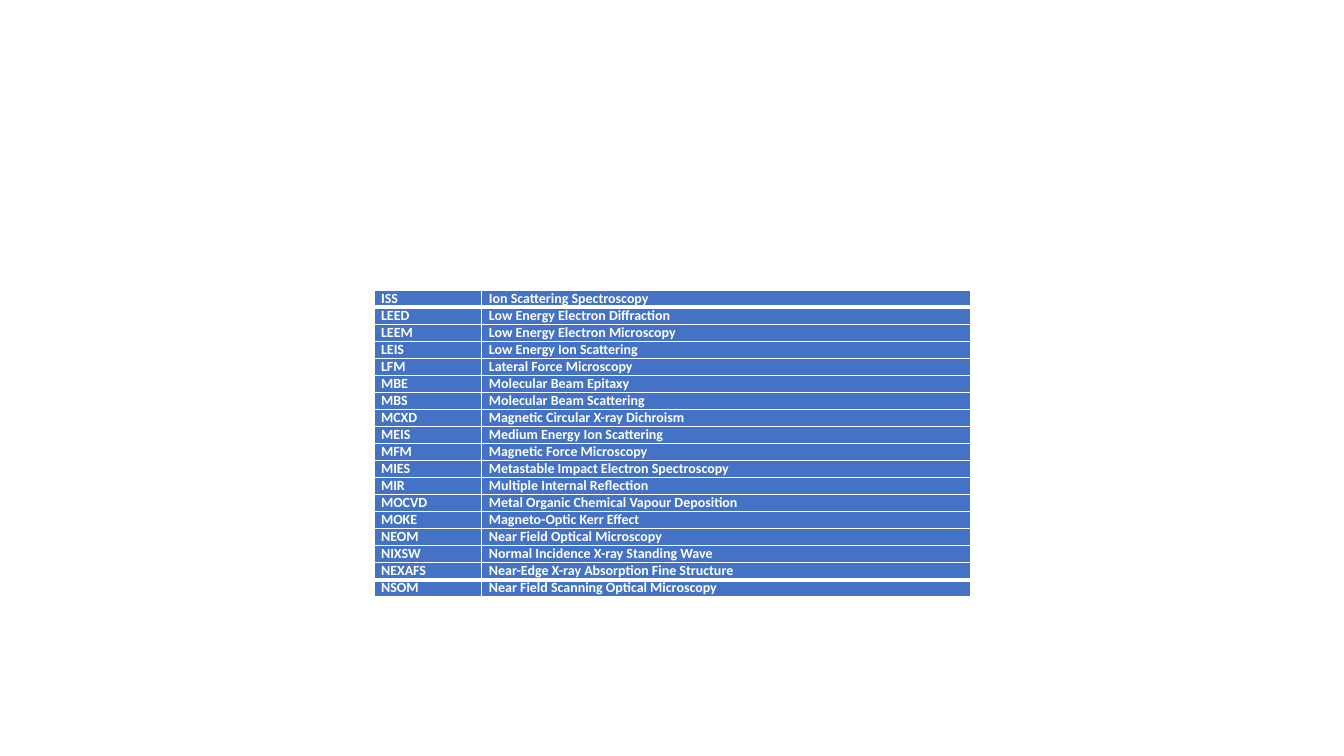
"""Build a slide with a table of surface science abbreviations."""
from lxml.etree import SubElement
from pptx import Presentation
from pptx.dml.color import RGBColor
from pptx.enum.text import PP_ALIGN
from pptx.oxml.ns import qn
from pptx.util import Inches, Pt

TECHNIQUES = [
    ("ISS", "Ion Scattering Spectroscopy"),
    ("LEED", "Low Energy Electron Diffraction"),
    ("LEEM", "Low Energy Electron Microscopy"),
    ("LEIS", "Low Energy Ion Scattering"),
    ("LFM", "Lateral Force Microscopy"),
    ("MBE", "Molecular Beam Epitaxy"),
    ("MBS", "Molecular Beam Scattering"),
    ("MCXD", "Magnetic Circular X-ray Dichroism"),
    ("MEIS", "Medium Energy Ion Scattering"),
    ("MFM", "Magnetic Force Microscopy"),
    ("MIES", "Metastable Impact Electron Spectroscopy"),
    ("MIR", "Multiple Internal Reflection"),
    ("MOCVD", "Metal Organic Chemical Vapour Deposition"),
    ("MOKE", "Magneto-Optic Kerr Effect"),
    ("NEOM", "Near Field Optical Microscopy"),
    ("NIXSW", "Normal Incidence X-ray Standing Wave"),
    ("NEXAFS", "Near-Edge X-ray Absorption Fine Structure"),
    ("NSOM", "Near Field Scanning Optical Microscopy"),
]
COLUMN_WIDTHS = (1.07, 4.85)
LEFT, TOP, HEIGHT = 3.71, 2.88, 3
BLUE, WHITE = "4472C4", "FFFFFF"
THIN, THICK = 1, 3


def rgb(code):
    return RGBColor.from_string(code)


def add_borders(cell, top, bottom):
    properties = cell._tc.get_or_add_tcPr()
    sides = (("a:lnL", THIN), ("a:lnR", THIN), ("a:lnT", top), ("a:lnB", bottom))
    for position, (side, weight) in enumerate(sides):
        border = SubElement(properties, qn(side), w=str(Pt(weight)))
        fill = SubElement(border, qn("a:solidFill"))
        SubElement(fill, qn("a:srgbClr"), val=WHITE)
        properties.insert(position, border)


def fill_cell(cell, wording):
    cell.fill.solid()
    cell.fill.fore_color.rgb = rgb(BLUE)
    cell.margin_left = cell.margin_right = Inches(0.07)
    cell.margin_top = cell.margin_bottom = 0
    cell.text_frame.text = wording
    paragraph = cell.text_frame.paragraphs[0]
    paragraph.alignment = PP_ALIGN.JUSTIFY
    font = paragraph.runs[0].font
    font.name, font.size, font.bold = "Calibri", Pt(10), True
    font.color.rgb = rgb(WHITE)


def main():
    presentation = Presentation()
    presentation.slide_width, presentation.slide_height = Inches(13.33), Inches(7.5)
    slide = presentation.slides.add_slide(presentation.slide_layouts[6])
    count = len(TECHNIQUES)
    glossary = slide.shapes.add_table(
        count, len(COLUMN_WIDTHS), Inches(LEFT), Inches(TOP),
        Inches(sum(COLUMN_WIDTHS)), Inches(HEIGHT)).table
    for column, width in zip(glossary.columns, COLUMN_WIDTHS):
        column.width = Inches(width)
    rules = [THICK if edge in (1, count - 1) else THIN for edge in range(count + 1)]
    for row, technique in enumerate(TECHNIQUES):
        for column, wording in enumerate(technique):
            cell = glossary.cell(row, column)
            fill_cell(cell, wording)
            add_borders(cell, rules[row], rules[row + 1])
    presentation.save("out.pptx")


if __name__ == "__main__":
    main()
